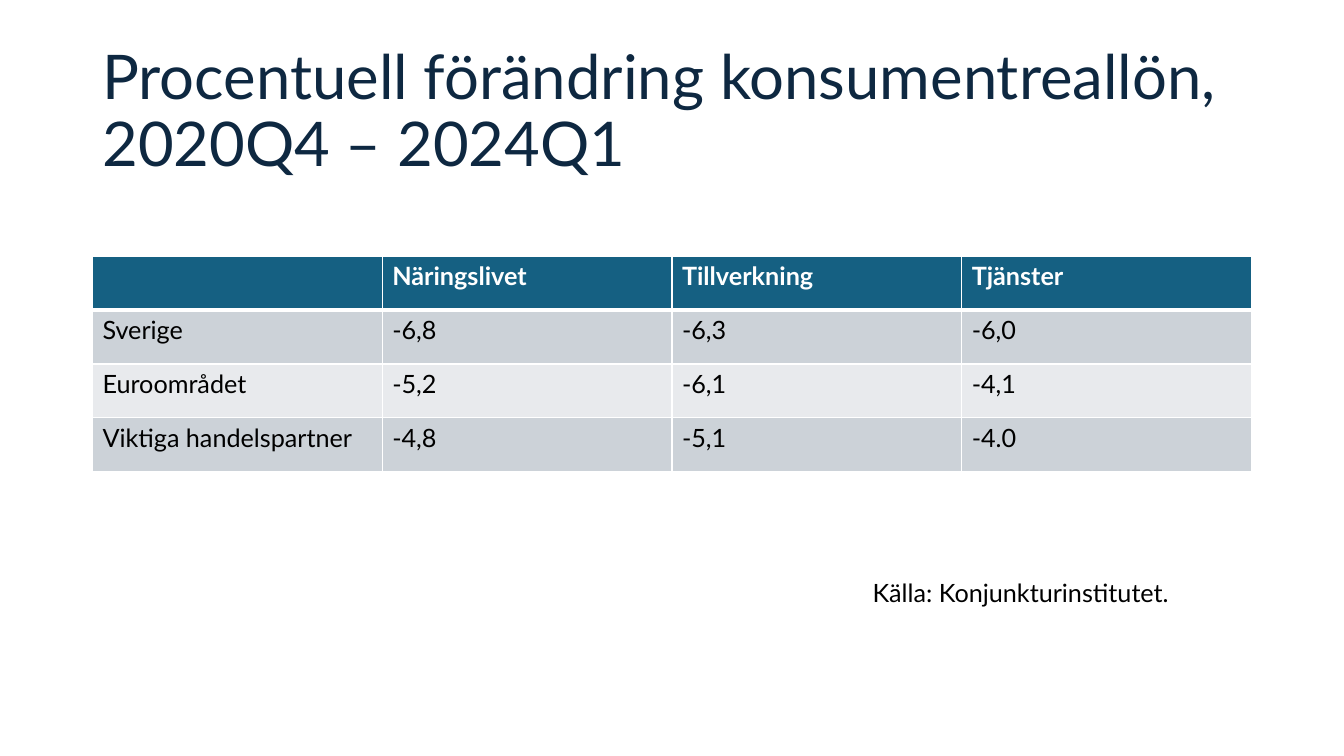
from typing import NamedTuple

import lxml.etree
import pptx
import pptx.dml.color
import pptx.enum.text
import pptx.oxml.ns
import pptx.slide
import pptx.table
import pptx.text.text
import pptx.util

Cm = pptx.util.Cm
Pt = pptx.util.Pt
RGBColor = pptx.dml.color.RGBColor
MSO_ANCHOR = pptx.enum.text.MSO_ANCHOR
qn = pptx.oxml.ns.qn

FONT = "Lato"
NAVY = RGBColor(0x0E, 0x28, 0x41)
TEAL = RGBColor(0x15, 0x60, 0x82)
GREY = RGBColor(0xCC, 0xD2, 0xD8)
LIGHT_GREY = RGBColor(0xE8, 0xEA, 0xED)
WHITE = RGBColor(0xFF, 0xFF, 0xFF)
BLACK = RGBColor(0x00, 0x00, 0x00)

LEFT, WIDTH = 2.33, 29.21
ROW_HEIGHT = 1.36


class WageRow(NamedTuple):
    label: str
    business: str
    manufacturing: str
    services: str


HEADER = WageRow("", "Näringslivet", "Tillverkning", "Tjänster")
REGIONS = [
    WageRow("Sverige", "-6,8", "-6,3", "-6,0"),
    WageRow("Euroområdet", "-5,2", "-6,1", "-4,1"),
    WageRow("Viktiga handelspartner", "-4,8", "-5,1", "-4.0"),
]


def write(tf: pptx.text.text.TextFrame, text: str, *, size: float = 18,
          color: RGBColor = BLACK, bold: bool = False,
          spacing: float = 1.0) -> None:
    """Put one formatted paragraph in a text frame."""
    p = tf.paragraphs[0]
    p.line_spacing = spacing
    p.font.size = Pt(size)
    if not text:
        return
    r = p.add_run()
    r.text = text
    r.font.name = FONT
    r.font.size = Pt(size)
    r.font.bold = bold
    r.font.color.rgb = color


def add_text(s: pptx.slide.Slide, text: str, left: float, top: float,
             width: float, height: float, *, wrap: bool = True,
             anchor: MSO_ANCHOR = MSO_ANCHOR.TOP, **style) -> None:
    """Add a text box, measured in centimetres."""
    sp = s.shapes.add_textbox(Cm(left), Cm(top), Cm(width), Cm(height))
    tf = sp.text_frame
    tf.word_wrap = wrap
    tf.vertical_anchor = anchor
    write(tf, text, **style)


def set_borders(cell: pptx.table._Cell, top: float, bottom: float) -> None:
    """Draw white borders; widths are in points."""
    tc_pr = cell._tc.get_or_add_tcPr()
    for side, width in (("L", 1), ("R", 1), ("T", top), ("B", bottom)):
        ln = lxml.etree.SubElement(tc_pr, qn(f"a:ln{side}"), w=str(Pt(width)))
        fill = lxml.etree.SubElement(ln, qn("a:solidFill"))
        lxml.etree.SubElement(fill, qn("a:srgbClr"), val=str(WHITE))


def add_wage_table(s: pptx.slide.Slide, top: float) -> None:
    """Add the header row and the banded region rows."""
    rows = [HEADER, *REGIONS]
    n_cols = len(HEADER)
    table = s.shapes.add_table(len(rows), n_cols, Cm(LEFT), Cm(top), Cm(WIDTH),
                               Cm(ROW_HEIGHT * len(rows))).table
    for i, row in enumerate(rows):
        table.rows[i].height = Cm(ROW_HEIGHT)
        is_header = i == 0
        band = TEAL if is_header else GREY if i % 2 else LIGHT_GREY
        for j, text in enumerate(row):
            cell = table.cell(i, j)
            set_borders(cell, top=3 if i == 1 else 1,
                        bottom=3 if is_header else 1)
            cell.fill.solid()
            cell.fill.fore_color.rgb = band
            write(cell.text_frame, text, bold=is_header,
                  color=WHITE if is_header else BLACK)


def main() -> None:
    prs = pptx.Presentation()
    prs.slide_width, prs.slide_height = Cm(33.87), Cm(19.05)
    s = prs.slides.add_slide(prs.slide_layouts[6])

    # Title
    add_text(s, "Procentuell förändring konsumentreallön, 2020Q4 – 2024Q1",
             LEFT, 1.01, WIDTH, 3.68, anchor=MSO_ANCHOR.MIDDLE,
             size=44, color=NAVY, spacing=0.9)

    # Real wage changes by region
    add_wage_table(s, top=6.45)

    # Source line
    add_text(s, "Källa: Konjunkturinstitutet.", 21.74, 14.43, 7.98, 1.03,
             wrap=False)

    prs.save("out.pptx")


if __name__ == "__main__":
    main()
